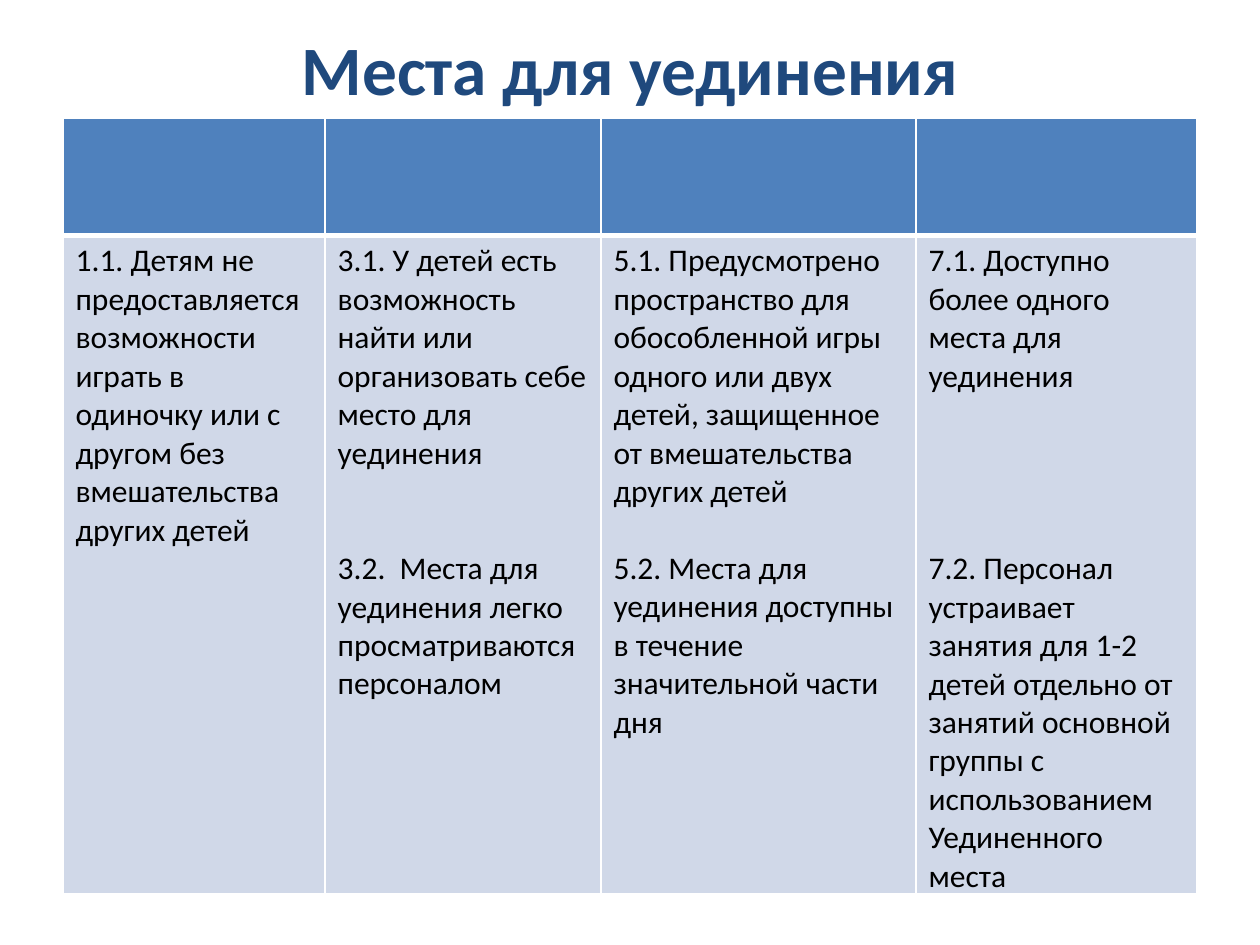
from lxml import etree
from pptx import Presentation
from pptx import util as u
from pptx.dml.color import RGBColor
from pptx.enum import text
from pptx.oxml import ns

TITLE = "Места для уединения"
FONT = "Calibri"
NAVY, BLUE, PALE, BLACK, WHITE = "1F497D", "4F81BD", "D0D8E8", "000000", "FFFFFF"
LINE_PITCH = 22
ROW_HEIGHTS = [0.93, 5.16]

# each column: width, then pairs of (empty lines above, wording)
COLUMNS = [
    (2.08, [
        (0, "1.1. Детям не предоставляется  возможности играть в одиночку или с другом без вмешательства других детей"),
    ]),
    (2.19, [
        (0, "3.1. У детей есть возможность найти или организовать себе место для уединения"),
        (2, "3.2.  Места для уединения легко просматриваются персоналом"),
    ]),
    (2.5, [
        (0, "5.1. Предусмотрено пространство для обособленной игры одного или двух детей, защищенное от вмешательства других детей"),
        (1, "5.2. Места для уединения доступны в течение значительной части дня"),
    ]),
    (2.23, [
        (0, "7.1. Доступно более одного места для уединения"),
        (4, "7.2. Персонал устраивает занятия для 1-2 детей отдельно от занятий основной группы с использованием"),
        (0, "Уединенного места"),
    ]),
]


def color(value):
    return RGBColor.from_string(value)


def style_font(para, size, value, bold=False):
    for span in para.runs:
        span.font.name = FONT
        span.font.size = u.Pt(size)
        span.font.bold = bold
        span.font.color.rgb = color(value)


def set_borders(cell, top, bottom):
    properties = cell._tc.get_or_add_tcPr()
    widths = {"a:lnL": 1, "a:lnR": 1, "a:lnT": top, "a:lnB": bottom}
    for position, (tag, width) in enumerate(widths.items()):
        line = etree.Element(ns.qn(tag), w=str(u.Pt(width)))
        fill = etree.SubElement(line, ns.qn("a:solidFill"))
        etree.SubElement(fill, ns.qn("a:srgbClr"), val=WHITE)
        properties.insert(position, line)


def paint(cell, value):
    cell.fill.solid()
    cell.fill.fore_color.rgb = color(value)


def add_title(page):
    box = page.shapes.add_textbox(u.Inches(0.5), u.Inches(0.3), u.Inches(9), u.Inches(0.48))
    frame = box.text_frame
    frame.word_wrap = True
    frame.vertical_anchor = text.MSO_ANCHOR.MIDDLE
    frame.text = TITLE
    para = frame.paragraphs[0]
    para.alignment = text.PP_ALIGN.CENTER
    style_font(para, 39.6, NAVY, bold=True)


def add_criteria(page):
    table = page.shapes.add_table(
        len(ROW_HEIGHTS), len(COLUMNS), u.Inches(0.5), u.Inches(0.94),
        u.Inches(9), u.Inches(sum(ROW_HEIGHTS))).table
    for row, height in zip(table.rows, ROW_HEIGHTS):
        row.height = u.Inches(height)
    for index, (width, criteria) in enumerate(COLUMNS):
        table.columns[index].width = u.Inches(width)
        header, body = table.cell(0, index), table.cell(1, index)
        paint(header, BLUE)
        set_borders(header, 1, 3)
        paint(body, PALE)
        set_borders(body, 3, 1)
        body.text_frame.text = "\n".join(wording for _, wording in criteria)
        for para, (gap, _) in zip(body.text_frame.paragraphs, criteria):
            para.space_before = u.Pt(gap * LINE_PITCH)
            style_font(para, 18, BLACK)


def main():
    deck = Presentation()
    deck.slide_width, deck.slide_height = u.Inches(10), u.Inches(7.5)
    page = deck.slides.add_slide(deck.slide_layouts[6])
    add_title(page)
    add_criteria(page)
    deck.save("out.pptx")


if __name__ == "__main__":
    main()
